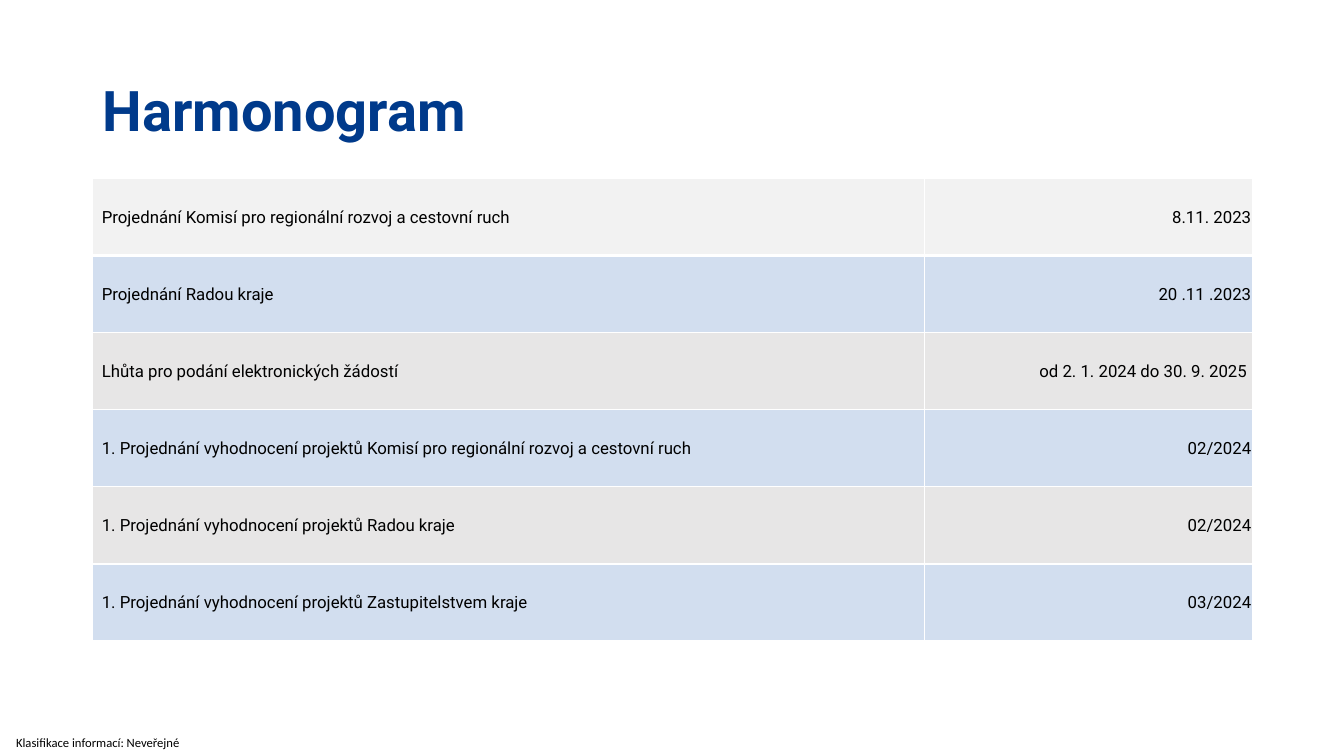
from lxml import etree
from pptx import Presentation
from pptx.dml.color import RGBColor
from pptx.enum.text import MSO_ANCHOR, PP_ALIGN
from pptx.oxml.ns import qn
from pptx.util import Inches, Pt

MIDDLE = MSO_ANCHOR.MIDDLE
LEFT, RIGHT = PP_ALIGN.LEFT, PP_ALIGN.RIGHT
TITLE_ONLY = 5

BLACK, WHITE, NAVY = "000000", "FFFFFF", "003A8B"
FIRST_ROW, BLUE_ROW, GREY_ROW = "F2F2F2", "D2DEEF", "E7E6E6"

SCHEDULE = [
    ("Projednání Komisí pro regionální rozvoj a cestovní ruch", "8.11. 2023"),
    ("Projednání Radou kraje", "20 .11 .2023"),
    ("Lhůta pro podání elektronických žádostí", "od 2. 1. 2024 do 30. 9. 2025 "),
    ("1. Projednání vyhodnocení projektů Komisí pro regionální rozvoj a cestovní ruch", "02/2024"),
    ("1. Projednání vyhodnocení projektů Radou kraje", "02/2024"),
    ("1. Projednání vyhodnocení projektů Zastupitelstvem kraje", "03/2024"),
]
COLUMN_WIDTHS = (8.25, 3.25)
TABLE_HEIGHT = 4.59


def rgb(color):
    return RGBColor.from_string(color)


def set_font(p, name, size, color, bold=False):
    p.font.name = name
    p.font.size = Pt(size)
    p.font.bold = bold
    p.font.color.rgb = rgb(color)


def set_borders(cell, color, widths):
    """Draw the left, right, top and bottom borders, widths in points."""
    tc_pr = cell._tc.get_or_add_tcPr()
    for side, width in zip("LRTB", widths):
        ln = etree.SubElement(tc_pr, qn(f"a:ln{side}"), w=str(Pt(width)))
        fill = etree.SubElement(ln, qn("a:solidFill"))
        etree.SubElement(fill, qn("a:srgbClr"), val=color)


def add_title(s, text):
    sp = s.shapes.title
    sp.left, sp.top = Inches(0.92), Inches(0.4)
    sp.width, sp.height = Inches(11.5), Inches(1.45)
    tf = sp.text_frame
    tf.text = text
    tf.vertical_anchor = MIDDLE
    p = tf.paragraphs[0]
    p.alignment = LEFT
    p.line_spacing = 0.9
    set_font(p, "Roboto", 40, NAVY, bold=True)


def fill_cell(cell, text, alignment, color, border_widths):
    cell.text = text
    cell.vertical_anchor = MIDDLE
    cell.margin_left = Inches(0.09)
    cell.margin_right = cell.margin_top = Inches(0.01)
    cell.margin_bottom = 0
    p = cell.text_frame.paragraphs[0]
    p.alignment = alignment
    set_font(p, "Roboto", 12, BLACK)
    set_borders(cell, WHITE, border_widths)
    cell.fill.solid()
    cell.fill.fore_color.rgb = rgb(color)


def add_schedule(s):
    frame = s.shapes.add_table(
        len(SCHEDULE), len(COLUMN_WIDTHS), Inches(0.92), Inches(1.77),
        Inches(sum(COLUMN_WIDTHS)), Inches(TABLE_HEIGHT))
    table = frame.table
    for column, width in zip(table.columns, COLUMN_WIDTHS):
        column.width = Inches(width)
    for i, texts in enumerate(SCHEDULE):
        color = FIRST_ROW if i == 0 else (GREY_ROW, BLUE_ROW)[i % 2]
        top, bottom = 3 if i == 1 else 1, 3 if i == 0 else 1
        for j, (text, alignment) in enumerate(zip(texts, (LEFT, RIGHT))):
            fill_cell(table.cell(i, j), text, alignment, color, (1, 1, top, bottom))


def add_classification(s, text):
    tf = s.shapes.add_textbox(0, Inches(7.23), Inches(1.94), Inches(0.27)).text_frame
    tf.word_wrap = True
    tf.margin_left = Inches(0.16)
    tf.margin_right = tf.margin_top = tf.margin_bottom = 0
    tf.vertical_anchor = MIDDLE
    tf.text = text
    set_font(tf.paragraphs[0], "Calibri", 9, BLACK)


def main():
    prs = Presentation()
    prs.slide_width, prs.slide_height = Inches(13.33), Inches(7.5)
    s = prs.slides.add_slide(prs.slide_layouts[TITLE_ONLY])
    add_classification(s, "Klasifikace informací: Neveřejné")
    add_title(s, "Harmonogram")
    add_schedule(s)
    prs.save("out.pptx")


if __name__ == "__main__":
    main()
